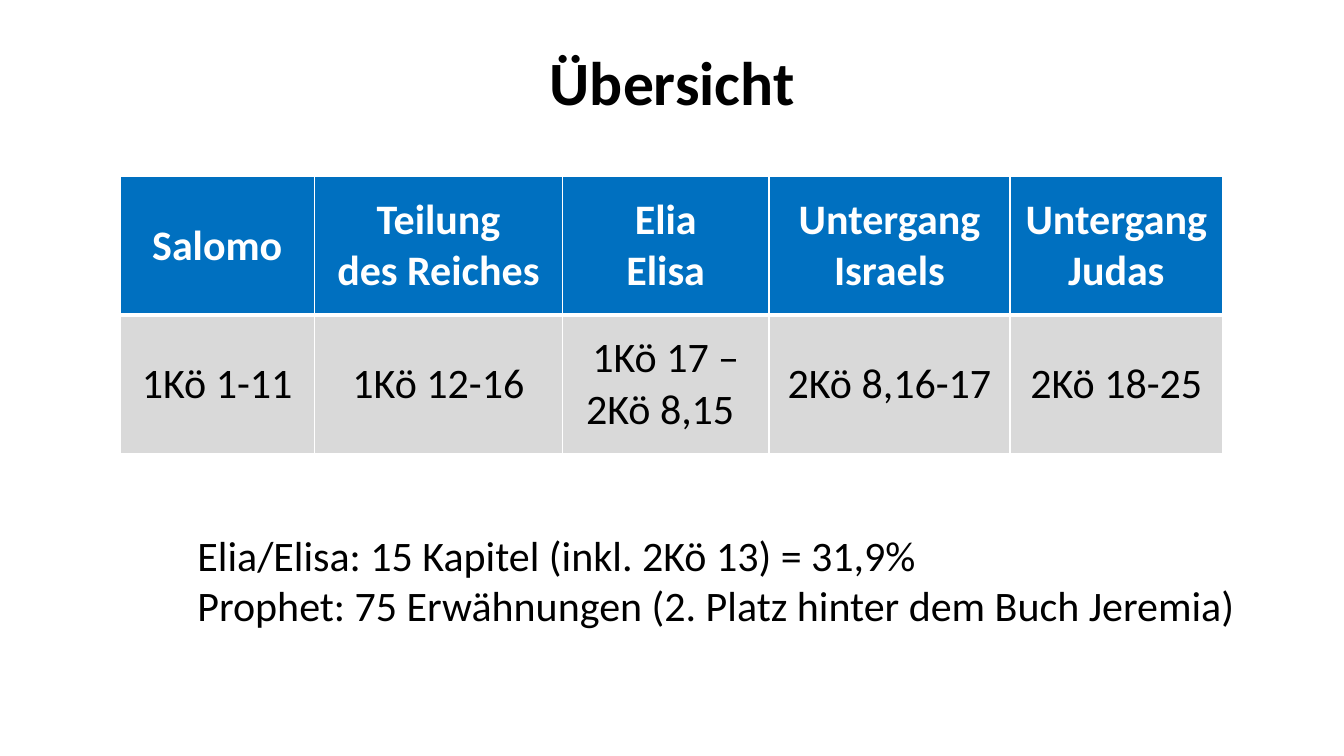
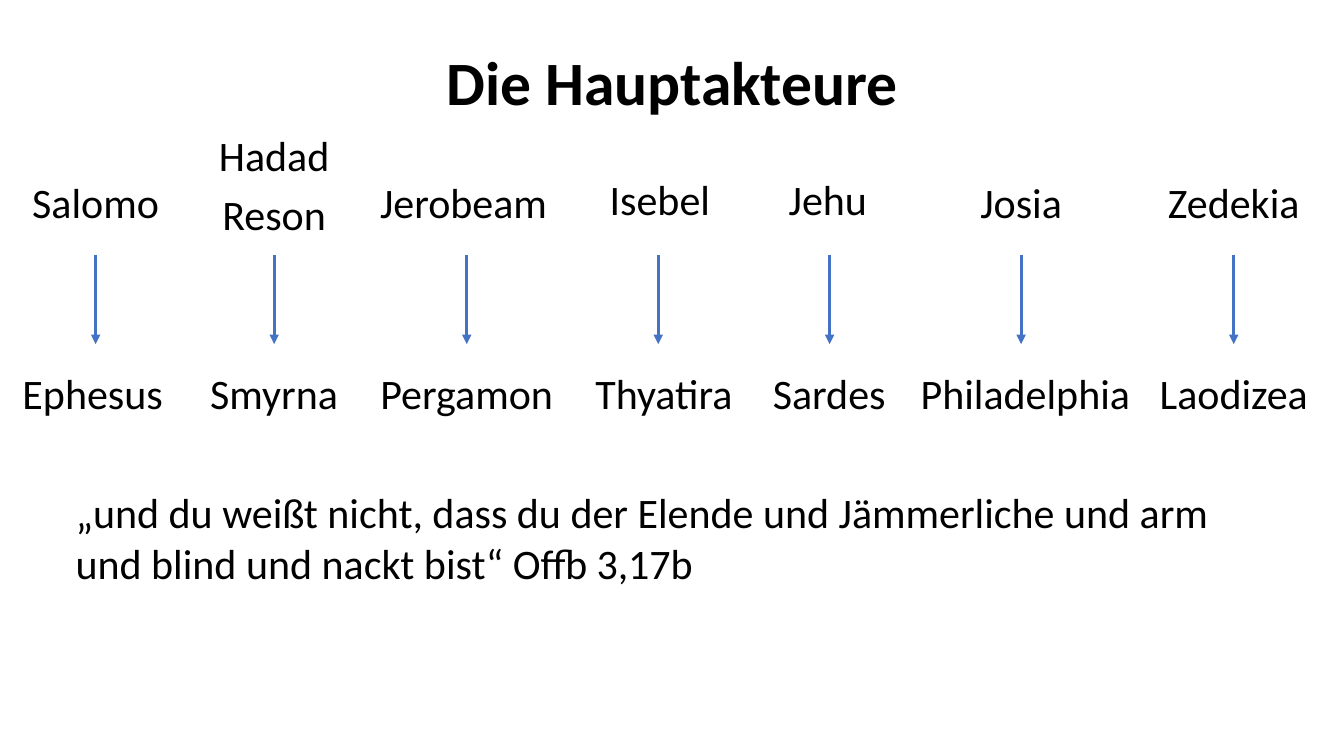
from itertools import accumulate
from lxml.etree import SubElement
from pptx import Presentation
from pptx.dml.color import RGBColor
from pptx.enum.shapes import MSO_CONNECTOR
from pptx.enum.text import MSO_ANCHOR, PP_ALIGN
from pptx.oxml import parse_xml
from pptx.oxml.ns import nsdecls, qn
from pptx.util import Inches, Pt

FONT = "Calibri"
BLACK = RGBColor(0x00, 0x00, 0x00)
WHITE = RGBColor(0xFF, 0xFF, 0xFF)
BLUE = RGBColor(0x00, 0x70, 0xC0)
GREY = RGBColor(0xD9, 0xD9, 0xD9)
ARROW = RGBColor(0x44, 0x72, 0xC4)
LEFT, MID = PP_ALIGN.LEFT, PP_ALIGN.CENTER

deck = Presentation()
deck.slide_width, deck.slide_height = Inches(13.33), Inches(7.5)
PLAN = deck.slide_layouts[5]

# Regions: left, top, width, height in percent of the slide
TITLE = (6.9, 5.33, 86.25, 11.87)
TABLE = (8.93, 23.33, 82.05, 36.67)
FACTS = (13.95, 69.33, 79.8, 14.8)
CAST = (0, 17.2, 100, 39.33)
QUOTE = (4.88, 63.73, 86.25, 14.8)

# Relative widths of the table's columns, and its texts
COLS = (193, 246, 205, 239, 211)
HEAD = ("Salomo", "Teilung\ndes Reiches", "Elia\nElisa",
        "Untergang\nIsraels", "Untergang\nJudas")
BOOKS = ("1Kö 1-11", "1Kö 12-16", "1Kö 17 –\n 2Kö 8,15",
         "2Kö 8,16-17", "2Kö 18-25")

# Arrow position, then (name, middle, width) in percent of the region;
# a king also has his top as a share of its height
PAIRS = (
    (7.12, ("Salomo", 7.12, 11.1, 0.16), ("Ephesus", 6.9, 13.9)),
    (20.4, ("Hadad\nReson", 20.4, 9.8, 0), ("Smyrna", 20.4, 11.1)),
    (34.73, ("Jerobeam", 34.5, 14.5, 0.16), ("Pergamon", 34.73, 14.5)),
    (48.98, ("Isebel", 49.1, 9.5, 0.15), ("Thyatira", 49.4, 11.8)),
    (61.73, ("Jehu", 61.6, 7.7, 0.15), ("Sardes", 61.7, 10.2)),
    (75.98, ("Josia", 75.98, 7.7, 0.16), ("Philadelphia", 76.3, 17.3)),
    (91.8, ("Zedekia", 91.8, 11.4, 0.16), ("Laodizea", 91.8, 12.8)),
)


def area(box):
    """Turn percentages of the slide into lengths."""
    sides = (deck.slide_width, deck.slide_height) * 2
    return [int(side * part / 100) for side, part in zip(sides, box)]


def write(frame, text, size=30, color=BLACK, bold=False, aligns=(LEFT,),
          line=None, before=None):
    """Fill a frame, one paragraph a line; the last alignment goes on."""
    for num, part in enumerate(text.split("\n")):
        para = frame.add_paragraph() if num else frame.paragraphs[0]
        para.alignment = aligns[min(num, len(aligns) - 1)]
        para.line_spacing = line
        para.space_before = before
        run = para.add_run()
        run.text = part
        font = run.font
        font.name, font.size, font.bold = FONT, Pt(size), bold
        font.color.rgb = color


def note(slide, box, text, wrap=True, **form):
    frame = slide.shapes.add_textbox(*box).text_frame
    frame.word_wrap = wrap
    write(frame, text, **form)


def start(text):
    """Add a slide with its title."""
    slide = deck.slides.add_slide(PLAN)
    frame = slide.shapes.title.text_frame
    frame.vertical_anchor = MSO_ANCHOR.MIDDLE
    write(frame, text, size=44, bold=True, aligns=(MID,), line=0.9)
    return slide


def edge(cell, sides):
    """Draw white borders, widths in points by side."""
    props = cell._tc.get_or_add_tcPr()
    for num, (side, width) in enumerate(sides.items()):
        props.insert(num, parse_xml(
            f'<a:ln{side} {nsdecls("a")} w="{Pt(width)}"><a:solidFill>'
            f'<a:srgbClr val="{WHITE}"/></a:solidFill></a:ln{side}>'))


def grid(slide, box):
    """Draw the overview table."""
    table = slide.shapes.add_table(2, len(COLS), *box).table
    for col, part in zip(table.columns, COLS):
        col.width = int(box[2] * part / sum(COLS))
    looks = ((HEAD, BLUE, WHITE, True, 1, 3), (BOOKS, GREY, BLACK, False, 3, 1))
    for row, (texts, fill, color, bold, top, base) in zip(table.rows, looks):
        row.height = box[3] // 2
        for cell, text in zip(row.cells, texts):
            cell.fill.solid()
            cell.fill.fore_color.rgb = fill
            cell.vertical_anchor = MSO_ANCHOR.MIDDLE
            cell.margin_left = cell.margin_right = Inches(0.14)
            cell.margin_top = cell.margin_bottom = 0
            aligns = (MID, LEFT) if "–" in text else (MID,)
            write(cell.text_frame, text, color=color, bold=bold, aligns=aligns)
            edge(cell, {"L": 1, "R": 1, "T": top, "B": base})


def arrow(slide, x, top, base):
    link = slide.shapes.add_connector(MSO_CONNECTOR.STRAIGHT, x, top, x, base)
    link.line.color.rgb = ARROW
    link.line.width = Pt(2.25)
    SubElement(link.line._get_or_add_ln(), qn("a:tailEnd"), type="triangle")
    SubElement(link._element.spPr, qn("a:effectLst"))


def cast(slide, box):
    """Place each king above his town, with an arrow between."""
    left, top, width, height = box

    def across(part):
        return int(left + width * part / 100)

    def down(part):
        return int(top + height * part)

    def name(text, mid, wide, high):
        tall = 0.39 if "\n" in text else 0.19
        spot = (across(mid - wide / 2), down(high),
                int(width * wide / 100), int(height * tall))
        note(slide, spot, text, wrap=False, aligns=(MID,), line=0.9,
             before=Pt(10))

    for x, king, town in PAIRS:
        name(*king)
        arrow(slide, across(x), down(0.42), down(0.72))
        name(*town, 0.8)


def main():
    # Shared title position
    head = PLAN.placeholders[0]
    head.left, head.top, head.width, head.height = area(TITLE)

    # Overview
    slide = start("Übersicht")
    grid(slide, area(TABLE))
    note(slide, area(FACTS),
         "Elia/Elisa: 15 Kapitel (inkl. 2Kö 13) = 31,9%\n"
         "Prophet: 75 Erwähnungen (2. Platz hinter dem Buch Jeremia)")

    # Main actors
    slide = start("Die Hauptakteure")
    cast(slide, area(CAST))
    note(slide, area(QUOTE),
         "„und du weißt nicht, dass du der Elende und Jämmerliche und arm "
         "und blind und nackt bist“ Offb 3,17b")
    deck.save("out.pptx")


if __name__ == "__main__":
    main()
